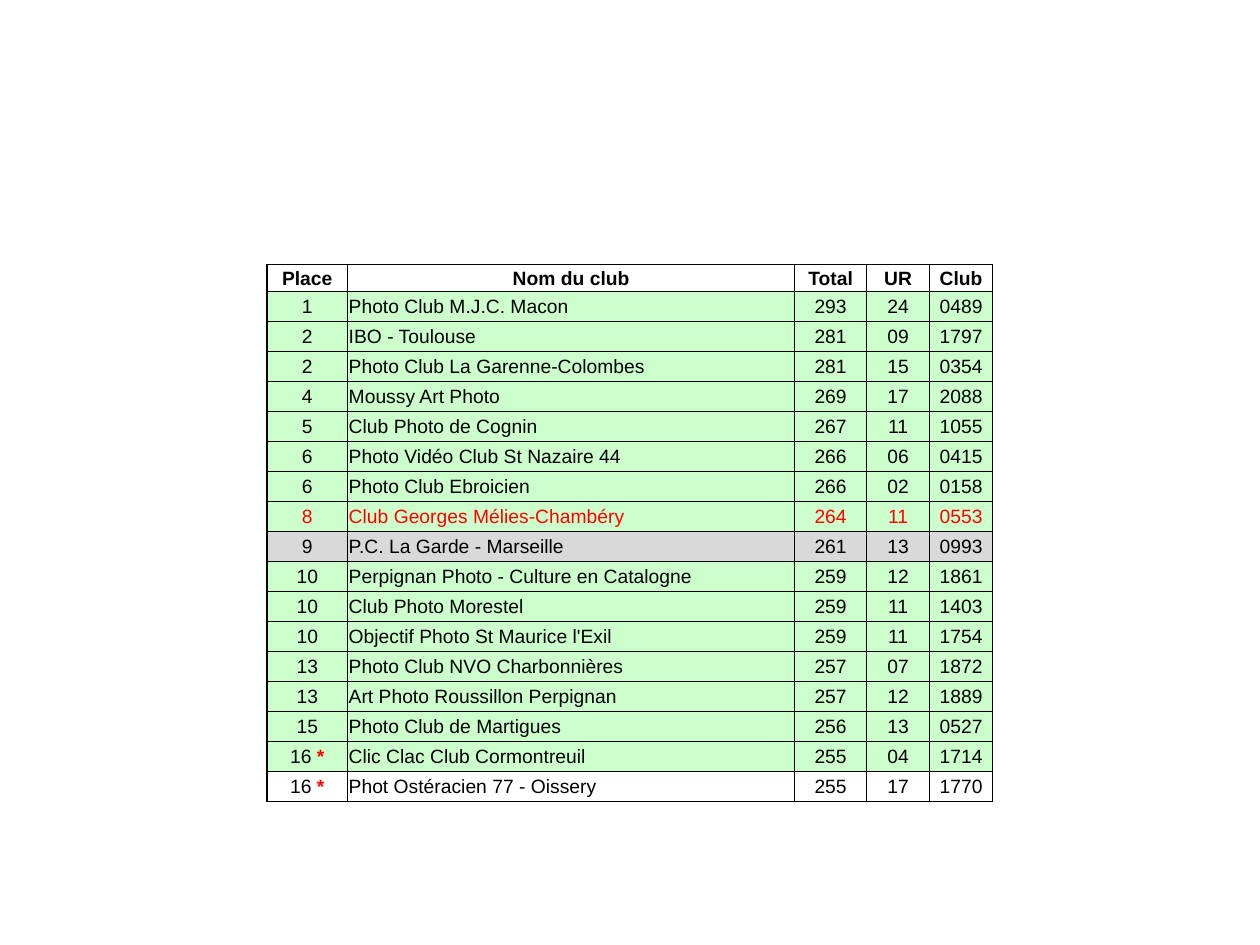
from lxml import etree
from pptx import Presentation
from pptx.dml.color import RGBColor
from pptx.enum.text import MSO_ANCHOR, PP_ALIGN
from pptx.oxml.ns import qn
from pptx.util import Cm, Pt

CENTER, LEFT = PP_ALIGN.CENTER, PP_ALIGN.LEFT
MIDDLE = MSO_ANCHOR.MIDDLE
BLANK_LAYOUT = 6

COLORS = {"black": "000000", "red": "FF0000", "green": "CCFFCC", "grey": "D9D9D9"}
THICK, THIN = 1, 0.5

# Grid: the club name covers several narrow columns
COLUMN_WIDTHS = [1.63, 3.25] + [1.44] * 4 + [1.45, 1.27, 1.27]
NAME_FIRST, NAME_LAST = 1, 5
HEADER_HEIGHT, TABLE_HEIGHT = 0.55, 10.82

HEADER = ("Place", "Nom du club", 5, "Total", "UR", "Club")
# Place, club name, columns the name spans, total, UR, club number
RESULTS = [
    ("1", "Photo Club M.J.C. Macon", 2, "293", "24", "0489"),
    ("2", "IBO - Toulouse", 1, "281", "09", "1797"),
    ("2", "Photo Club La Garenne-Colombes", 3, "281", "15", "0354"),
    ("4", "Moussy Art Photo", 1, "269", "17", "2088"),
    ("5", "Club Photo de Cognin", 2, "267", "11", "1055"),
    ("6", "Photo Vidéo Club St Nazaire 44", 3, "266", "06", "0415"),
    ("6", "Photo Club Ebroicien", 2, "266", "02", "0158"),
    ("8", "Club Georges Mélies-Chambéry", 3, "264", "11", "0553"),
    ("9", "P.C. La Garde - Marseille", 2, "261", "13", "0993"),
    ("10", "Perpignan Photo - Culture en Catalogne", 4, "259", "12", "1861"),
    ("10", "Club Photo Morestel", 2, "259", "11", "1403"),
    ("10", "Objectif Photo St Maurice l'Exil", 3, "259", "11", "1754"),
    ("13", "Photo Club NVO Charbonnières", 3, "257", "07", "1872"),
    ("13", "Art Photo Roussillon Perpignan", 3, "257", "12", "1889"),
    ("15", "Photo Club de Martigues", 2, "256", "13", "0527"),
    ("16 *", "Clic Clac Club Cormontreuil", 3, "255", "04", "1714"),
    ("16 *", "Phot Ostéracien 77 - Oissery", 3, "255", "17", "1770"),
]
RED_ROW, GREY_ROW, WHITE_ROW = 8, 9, 17


class RankingSlide:
    font_name = "Arial"
    font_size = 11
    cell_format = {
        "vertical_anchor": MIDDLE,
        "margin_left": Cm(0.02),
        "margin_right": Cm(0.02),
        "margin_top": Cm(0.02),
        "margin_bottom": Cm(0),
    }

    def __init__(self, slide):
        self.slide = slide

    def span(self, para, text, color, bold):
        span = para.add_run()
        span.text = text
        values = {"name": self.font_name, "size": Pt(self.font_size), "bold": bold}
        for name, value in values.items():
            setattr(span.font, name, value)
        span.font.color.rgb = RGBColor.from_string(COLORS[color])

    def text(self, cell, text, align, color, bold):
        para = cell.text_frame.paragraphs[0]
        para.alignment = align
        plain, star, _ = text.partition("*")
        if plain:
            self.span(para, plain, color, bold)
        if star:
            self.span(para, star, "red", True)
        # Keeps empty cells as low as the filled ones
        end = etree.SubElement(para._p, qn("a:endParaRPr"))
        end.set("sz", str(self.font_size * 100))

    def border(self, cell, side, points):
        line = etree.SubElement(cell._tc.get_or_add_tcPr(), qn(f"a:ln{side}"))
        line.set("w", str(Pt(points)))
        if points:
            fill = etree.SubElement(line, qn("a:solidFill"))
            etree.SubElement(fill, qn("a:srgbClr")).set("val", COLORS["black"])
        else:
            etree.SubElement(line, qn("a:noFill"))

    def cell(self, cell, text, align, color, bold, fill, borders):
        for name, value in self.cell_format.items():
            setattr(cell, name, value)
        self.text(cell, text, align, color, bold)
        for side, points in borders.items():
            self.border(cell, side, points)
        if fill:
            cell.fill.solid()
            cell.fill.fore_color.rgb = RGBColor.from_string(COLORS[fill])
        else:
            cell.fill.background()

    def row(self, table, index, values):
        place, club, name_span, *numbers = values
        header = index == 0
        texts = [place, club] + [""] * (NAME_LAST - NAME_FIRST) + numbers
        color = "red" if index == RED_ROW else "black"
        fill = {0: None, WHITE_ROW: None, GREY_ROW: "grey"}.get(index, "green")
        for column, text in enumerate(texts):
            in_name = NAME_FIRST <= column <= NAME_LAST
            last = column + name_span - 1 if column == NAME_FIRST else column
            borders = {
                "L": 0 if in_name and column > NAME_FIRST else THICK,
                "R": 0 if in_name and last < NAME_LAST else THICK,
                "T": THICK if index <= 1 else THIN,
                "B": THICK if header else THIN,
            }
            align = LEFT if in_name and not header else CENTER
            self.cell(table.cell(index, column), text, align, color, header, fill, borders)
        if name_span > 1:
            end = table.cell(index, NAME_FIRST + name_span - 1)
            table.cell(index, NAME_FIRST).merge(end)

    def table(self, rows, left, top):
        frame = self.slide.shapes.add_table(
            len(rows), len(COLUMN_WIDTHS), Cm(left), Cm(top),
            Cm(sum(COLUMN_WIDTHS)), Cm(TABLE_HEIGHT))
        table = frame.table
        table.first_row = table.horz_banding = False
        for column, width in zip(table.columns, COLUMN_WIDTHS):
            column.width = Cm(width)
        row_height = (TABLE_HEIGHT - HEADER_HEIGHT) / (len(rows) - 1)
        for index, values in enumerate(rows):
            table.rows[index].height = Cm(row_height if index else HEADER_HEIGHT)
            self.row(table, index, values)


def main():
    deck = Presentation()
    deck.slide_width, deck.slide_height = Cm(25.4), Cm(19.05)
    page = RankingSlide(deck.slides.add_slide(deck.slide_layouts[BLANK_LAYOUT]))

    # Club ranking
    page.table([HEADER] + RESULTS, left=5.38, top=5.33)
    deck.save("out.pptx")


if __name__ == "__main__":
    main()
